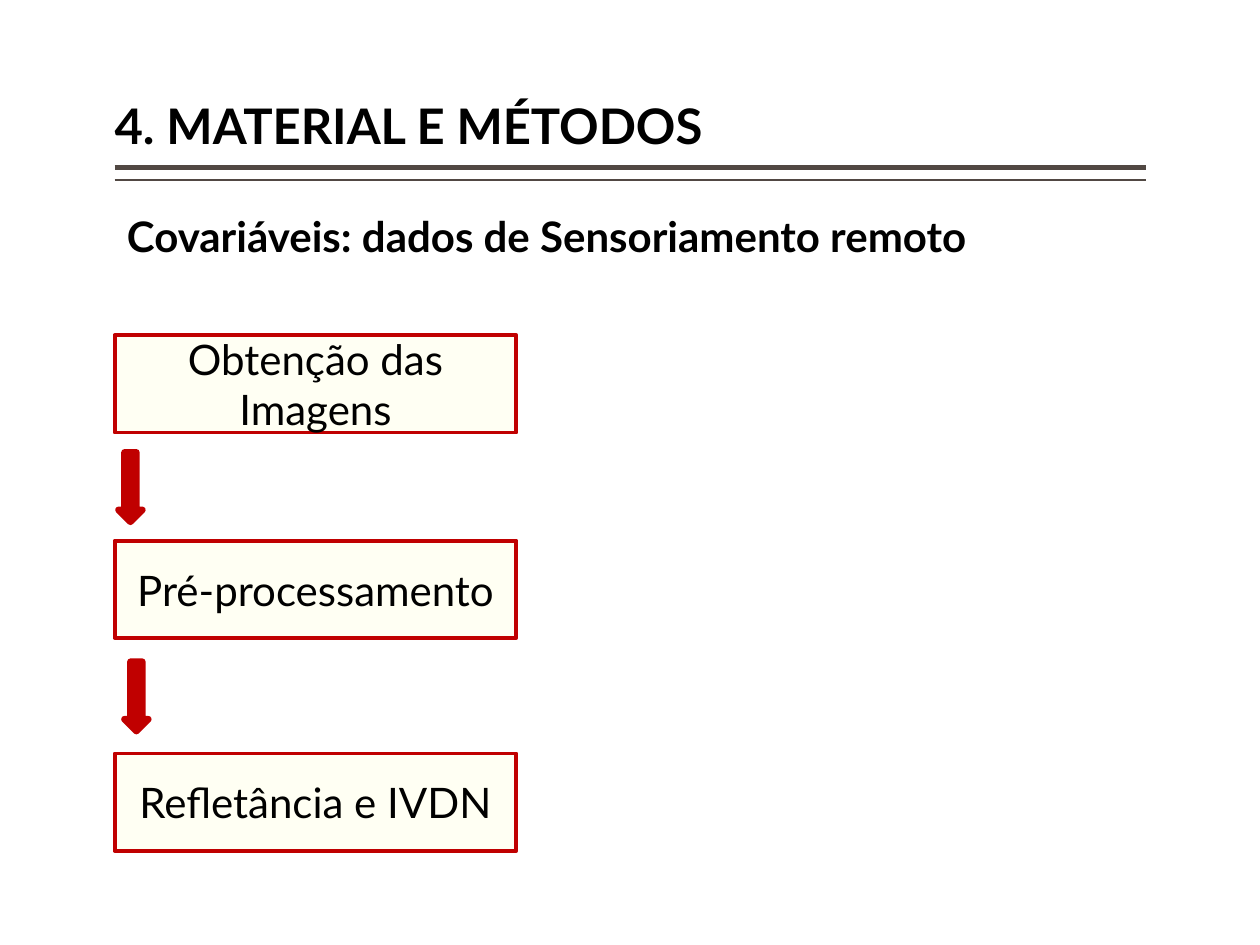
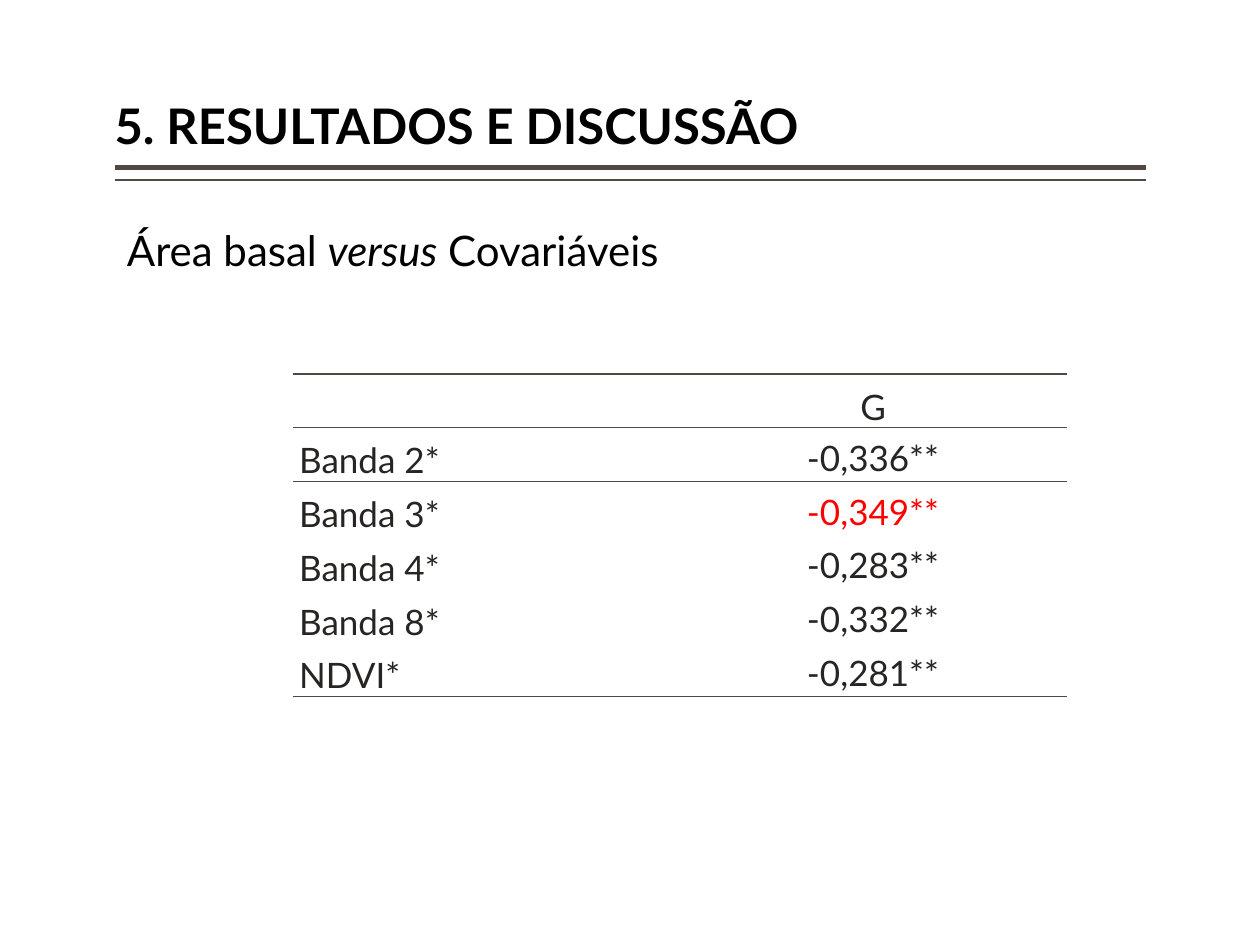
from lxml import etree
from pptx import Presentation
from pptx.dml.color import RGBColor
from pptx.enum.shapes import MSO_CONNECTOR, MSO_SHAPE
from pptx.enum.text import MSO_ANCHOR, MSO_AUTO_SIZE, PP_ALIGN
from pptx.oxml.ns import qn
from pptx.util import Cm, Pt

LEFT, CENTER = PP_ALIGN.LEFT, PP_ALIGN.CENTER
MIDDLE, BOTTOM = MSO_ANCHOR.MIDDLE, MSO_ANCHOR.BOTTOM
NO_AUTOFIT = MSO_AUTO_SIZE.NONE
STRAIGHT = MSO_CONNECTOR.STRAIGHT
RECTANGLE, DOWN_ARROW = MSO_SHAPE.RECTANGLE, MSO_SHAPE.DOWN_ARROW

BLACK = RGBColor(0x00, 0x00, 0x00)
BROWN = RGBColor(0x51, 0x48, 0x43)
DARK = RGBColor(0x28, 0x24, 0x22)
CRIMSON = RGBColor(0xC0, 0x00, 0x00)
RED = RGBColor(0xFF, 0x00, 0x00)
IVORY = RGBColor(0xFF, 0xFF, 0xF3)

FONT = "Lato"
TITLE_ONLY = 5
MARGIN = Cm(2.31)
CONTENT_WIDTH = Cm(20.8)
HEADER_RULES = ((Cm(3.38), Pt(3)), (Cm(3.63), Pt(1)))

CORRELATIONS = (
    ("", "G"),
    ("Banda 2*", "-0,336**"),
    ("Banda 3*", "-0,349**"),
    ("Banda 4*", "-0,283**"),
    ("Banda 8*", "-0,332**"),
    ("NDVI*", "-0,281**"),
)
STRONGEST = "-0,349**"
RULED_EDGES = {0, 1, 2, len(CORRELATIONS)}


def write(frame, *runs, size=24, color=BLACK, bold=False, italics=(),
          align=LEFT, anchor=MIDDLE, spacing=1.0):
    """Fill the frame with one paragraph; italics lists the slanted runs."""
    frame.word_wrap = True
    frame.vertical_anchor = anchor
    paragraph = frame.paragraphs[0]
    paragraph.alignment = align
    paragraph.line_spacing = spacing
    for words in runs:
        run = paragraph.add_run()
        run.text = words
        font = run.font
        font.name, font.size, font.bold = FONT, Pt(size), bold
        font.italic = words in italics
        font.color.rgb = color


def add_header(slide, heading):
    for y, weight in HEADER_RULES:
        rule = slide.shapes.add_connector(
            STRAIGHT, MARGIN, y, MARGIN + CONTENT_WIDTH, y)
        rule.line.color.rgb = BROWN
        rule.line.width = weight
        etree.SubElement(rule._element.spPr, qn("a:effectLst"))
    title = slide.shapes.title
    title.left, title.top = MARGIN, Cm(0.2)
    title.width, title.height = CONTENT_WIDTH, Cm(3.05)
    frame = title.text_frame
    frame.auto_size = NO_AUTOFIT
    frame.margin_left = frame.margin_right = 0
    write(frame, heading, size=28, bold=True, anchor=BOTTOM, spacing=0.9)


def add_subtitle(slide, top, *runs, **formats):
    box = slide.shapes.add_textbox(MARGIN, top, CONTENT_WIDTH, Cm(1.27))
    write(box.text_frame, *runs, **formats)


def add_block(slide, kind, left, top, width, height, fill, weight):
    block = slide.shapes.add_shape(kind, left, top, width, height)
    block.shadow.inherit = False
    block.fill.solid()
    block.fill.fore_color.rgb = fill
    block.line.color.rgb = CRIMSON
    block.line.width = Pt(weight)
    return block


def add_flow(slide, left, top):
    """Stack the processing steps, with an arrow between each pair."""
    steps = (
        ("Obtenção das Imagens", 0),
        ("Pré-processamento", 4.14),
        ("Refletância e IVDN", 8.43),
    )
    for label, drop in steps:
        step = add_block(slide, RECTANGLE, left, top + Cm(drop),
                         Cm(8.1), Cm(1.96), IVORY, 2.25)
        write(step.text_frame, label, align=CENTER)
    for shift, drop in ((0.08, 2.36), (0.2, 6.58)):
        add_block(slide, DOWN_ARROW, left + Cm(shift), top + Cm(drop),
                  Cm(0.48), Cm(1.4), CRIMSON, 3.78)


def set_borders(cell, row):
    """Rule the top and bottom of a cell where the table has a line."""
    properties = cell._tc.get_or_add_tcPr()
    edges = (("L", False), ("R", False),
             ("T", row in RULED_EDGES), ("B", row + 1 in RULED_EDGES))
    for side, ruled in edges:
        border = etree.SubElement(properties, qn(f"a:ln{side}"), w=str(Pt(1)))
        if ruled:
            fill = etree.SubElement(border, qn("a:solidFill"))
            etree.SubElement(fill, qn("a:srgbClr"), val=str(BROWN))
        else:
            etree.SubElement(border, qn("a:noFill"))


def add_correlation_table(slide, left, top, width, height):
    rows, columns = len(CORRELATIONS), len(CORRELATIONS[0])
    table = slide.shapes.add_table(
        rows, columns, left, top, width, height).table
    table.first_row = table.horz_banding = False
    for r, values in enumerate(CORRELATIONS):
        for c, value in enumerate(values):
            cell = table.cell(r, c)
            cell.margin_left = cell.margin_right = Cm(0.13)
            cell.margin_top = cell.margin_bottom = 0
            set_borders(cell, r)
            cell.fill.background()
            anchor = MIDDLE if r and c else BOTTOM
            write(cell.text_frame, value, size=20, spacing=1.15,
                  color=RED if value == STRONGEST else DARK,
                  align=CENTER if c else LEFT, anchor=anchor)
            cell.vertical_anchor = anchor


def add_methods_slide(deck):
    slide = deck.slides.add_slide(deck.slide_layouts[TITLE_ONLY])
    add_header(slide, "4. MATERIAL E MÉTODOS")
    add_subtitle(slide, Cm(4.11),
                 "Covariáveis: dados de Sensoriamento remoto", bold=True)
    add_flow(slide, MARGIN, Cm(6.76))


def add_results_slide(deck):
    slide = deck.slides.add_slide(deck.slide_layouts[TITLE_ONLY])
    add_header(slide, "5. RESULTADOS E DISCUSSÃO")
    add_subtitle(slide, Cm(4.39), "Área basal ", "versus", " Covariáveis",
                 italics=("versus",))
    add_correlation_table(slide, Cm(5.9), Cm(7.54), Cm(15.6), Cm(6.5))


def main():
    deck = Presentation()
    deck.slide_width, deck.slide_height = Cm(25.4), Cm(19.05)
    add_methods_slide(deck)
    add_results_slide(deck)
    deck.save("out.pptx")


if __name__ == "__main__":
    main()
